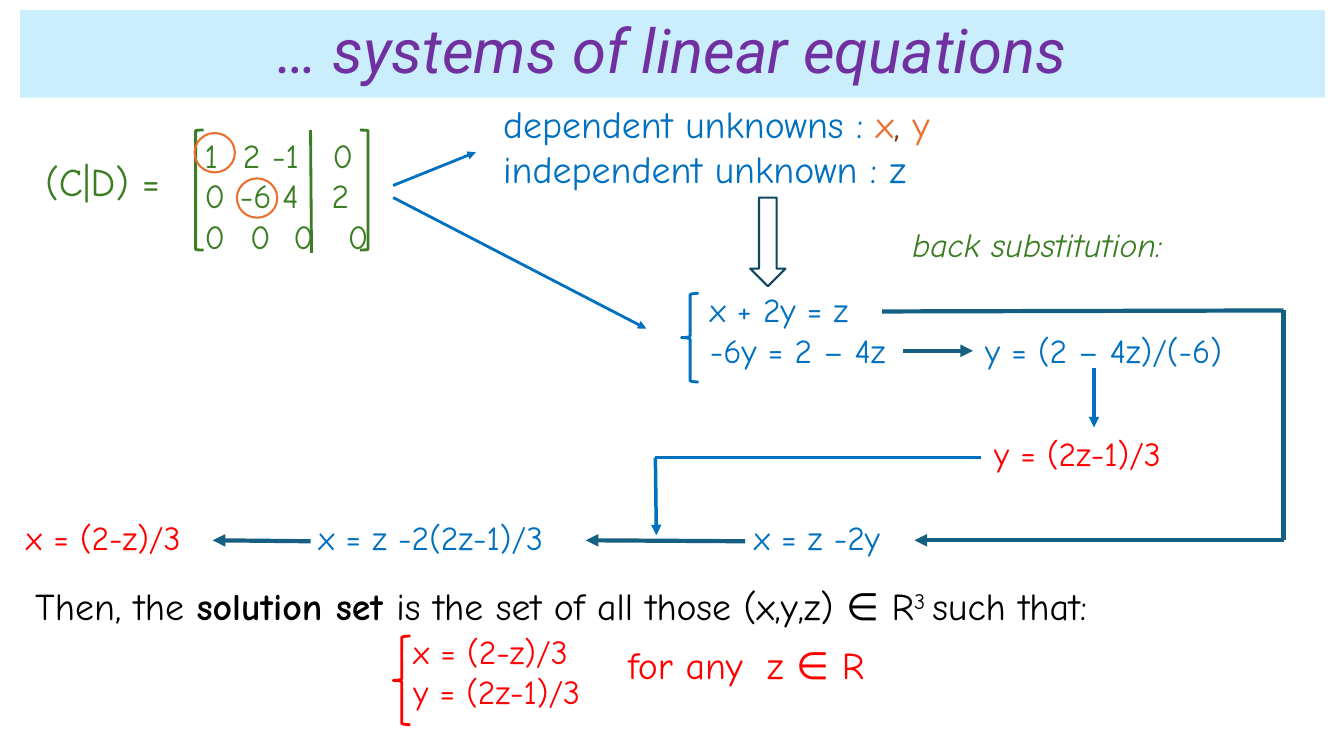
from dataclasses import dataclass
from itertools import pairwise

from lxml.etree import SubElement
from pptx import Presentation
from pptx.dml.color import RGBColor
from pptx.enum.shapes import MSO_CONNECTOR, MSO_SHAPE
from pptx.enum.text import MSO_ANCHOR, MSO_AUTO_SIZE, PP_ALIGN
from pptx.oxml.ns import qn
from pptx.util import Inches, Pt


@dataclass(frozen=True)
class Theme:
    body_font: str = "Comic Neue"
    title_font: str = "Roboto"
    title_size: int = 44
    label_size: int = 28
    text_size: int = 27
    math_size: int = 24
    band: str = "CAEEFB"
    purple: str = "7030A0"
    green: str = "3B7D23"
    blue: str = "0070C0"
    teal: str = "156082"
    dark_teal: str = "104760"
    orange: str = "E97132"
    brown: str = "80350E"
    red: str = "FF0000"
    black: str = "000000"


THEME = Theme()


def rgb(color):
    return RGBColor.from_string(color)


def add_span(para, text, color, size, font=THEME.body_font, bold=False,
             italic=False, raised=False):
    span = para.add_run()
    span.text = text
    span.font.name = font
    span.font.size = Pt(size)
    span.font.color.rgb = rgb(color)
    span.font.bold = bold
    span.font.italic = italic
    if raised:
        span.font._element.set("baseline", "30000")


def set_tabs(para, stops):
    tab_list = SubElement(para._p.get_or_add_pPr(), qn("a:tabLst"))
    for stop in stops:
        SubElement(tab_list, qn("a:tab"), pos=str(Inches(stop)), algn="l")


def add_text(page, left, top, width, lines, size=THEME.math_size, tabs=()):
    """Each line is a list of (text, color, optional format) spans."""
    height = len(lines) * size / 60
    box = page.shapes.add_textbox(Inches(left), Inches(top), Inches(width), Inches(height))
    frame = box.text_frame
    frame.word_wrap = True
    frame.margin_left = frame.margin_right = frame.margin_top = frame.margin_bottom = 0
    for index, line in enumerate(lines):
        para = frame.paragraphs[0] if index == 0 else frame.add_paragraph()
        if tabs:
            set_tabs(para, tabs[index])
        for text, color, *style in line:
            add_span(para, text, color, size, **(style[0] if style else {}))


def add_outline(page, kind, left, top, width, height, color, weight=2):
    shape = page.shapes.add_shape(kind, Inches(left), Inches(top), Inches(width), Inches(height))
    shape.shadow.inherit = False
    shape.fill.background()
    shape.line.color.rgb = rgb(color)
    shape.line.width = Pt(weight)


def add_route(page, points, color, weight, arrow=True):
    """Straight connectors through the points, with an arrowhead at the end."""
    for start, end in pairwise(points):
        line = page.shapes.add_connector(
            MSO_CONNECTOR.STRAIGHT, *(Inches(value) for value in (*start, *end)))
        line.line.color.rgb = rgb(color)
        line.line.width = Pt(weight)
        if arrow and end == points[-1]:
            SubElement(line.line._get_or_add_ln(), qn("a:tailEnd"), type="triangle")
        SubElement(line._element.spPr, qn("a:effectLst"))


def add_title(page, text):
    title = page.shapes.title
    title.left, title.top = Inches(0.2), Inches(0.1)
    title.width, title.height = Inches(12.94), Inches(0.87)
    title.fill.solid()
    title.fill.fore_color.rgb = rgb(THEME.band)
    frame = title.text_frame
    frame.auto_size = MSO_AUTO_SIZE.NONE
    frame.vertical_anchor = MSO_ANCHOR.MIDDLE
    para = frame.paragraphs[0]
    para.alignment = PP_ALIGN.CENTER
    para.line_spacing = 0.9
    add_span(para, text, THEME.purple, THEME.title_size, THEME.title_font, italic=True)


def add_matrix(page):
    add_text(page, 0.45, 1.56, 1.35, [[("(C|D) =", THEME.green)]], THEME.label_size)
    for kind, left in ((MSO_SHAPE.LEFT_BRACKET, 1.94), (MSO_SHAPE.RIGHT_BRACKET, 3.57)):
        add_outline(page, kind, left, 1.29, 0.08, 1.19, THEME.green)
    add_route(page, [(3.08, 1.29), (3.09, 2.51)], THEME.green, 2, arrow=False)
    rows = ["1\t2\t-1\t0", "0\t-6\t4\t2", "0\t0\t0\t0"]
    stops = [(0.38, 0.67, 1.27), (0.35, 0.77, 1.26), (0.45, 0.88, 1.42)]
    add_text(page, 2.03, 1.34, 1.8, [[(row, THEME.green)] for row in rows], tabs=stops)
    # Pivots
    for left, top in ((2.35, 1.77), (1.93, 1.32)):
        add_outline(page, MSO_SHAPE.OVAL, left, top, 0.4, 0.39, THEME.orange, 1.5)


def add_unknowns(page):
    add_text(page, 4.99, 1.0, 5, [
        [("dependent unknowns : ", THEME.blue), ("x", THEME.orange),
         (", ", THEME.brown), ("y", THEME.orange)],
        [("independent unknown : z", THEME.blue)],
    ], THEME.text_size)
    add_outline(page, MSO_SHAPE.DOWN_ARROW, 7.44, 1.96, 0.35, 0.88, THEME.dark_teal, 1.5)


def add_substitution(page):
    # Equations
    add_text(page, 9.05, 2.22, 2.9, [[("back substitution:", THEME.green, {"italic": True})]])
    add_outline(page, MSO_SHAPE.LEFT_BRACE, 6.76, 2.91, 0.17, 0.88, THEME.blue)
    add_text(page, 7.04, 2.87, 2.2, [[("x + 2y = z", THEME.blue)], [("-6y = 2 – 4z", THEME.blue)]])
    steps = [
        (9.77, 3.27, "y = (2 – 4z)/(-6)", THEME.blue),
        (9.86, 4.29, "y = (2z-1)/3", THEME.red),
        (7.48, 5.13, "x = z -2y", THEME.blue),
        (3.16, 5.13, "x = z -2(2z-1)/3", THEME.blue),
        (0.26, 5.13, "x = (2-z)/3", THEME.red),
    ]
    for left, top, text, color in steps:
        add_text(page, left, top, 2.8, [[(text, color)]])

    # Arrows between the steps
    routes = [
        ([(3.9, 1.84), (4.72, 1.51)], THEME.blue, 2),
        ([(3.9, 1.96), (6.41, 3.26)], THEME.blue, 2),
        ([(8.96, 3.48), (9.65, 3.48)], THEME.teal, 3),
        ([(10.85, 3.65), (10.85, 4.24)], THEME.blue, 2.5),
        ([(8.75, 3.09), (12.73, 3.08), (12.73, 5.36), (9.07, 5.36)], THEME.teal, 3),
        ([(7.39, 5.37), (5.81, 5.36)], THEME.teal, 3),
        ([(9.73, 4.54), (6.5, 4.54), (6.51, 5.31)], THEME.blue, 2.5),
        ([(3.08, 5.37), (2.11, 5.36)], THEME.teal, 3),
    ]
    for points, color, weight in routes:
        add_route(page, points, color, weight)


def add_solution(page):
    add_text(page, 0.35, 5.78, 12.6, [[
        ("Then, the ", THEME.black),
        ("solution set ", THEME.black, {"bold": True}),
        ("is the set of all those (x,y,z) ∈ R", THEME.black),
        ("3 ", THEME.black, {"raised": True}),
        ("such that:", THEME.black),
    ]], THEME.text_size)
    add_outline(page, MSO_SHAPE.LEFT_BRACE, 3.9, 6.31, 0.17, 0.88, THEME.red)
    add_text(page, 4.1, 6.26, 2, [[("x = (2-z)/3", THEME.red)], [("y = (2z-1)/3", THEME.red)]])
    add_text(page, 6.23, 6.37, 4, [[("for any\tz ∈ R", THEME.red)]], THEME.text_size, [(1.38,)])


def main():
    deck = Presentation()
    deck.slide_width, deck.slide_height = Inches(13.33), Inches(7.5)
    page = deck.slides.add_slide(deck.slide_layouts[5])
    add_title(page, "… systems of linear equations")
    add_matrix(page)
    add_unknowns(page)
    add_substitution(page)
    add_solution(page)
    deck.save("out.pptx")


if __name__ == "__main__":
    main()
